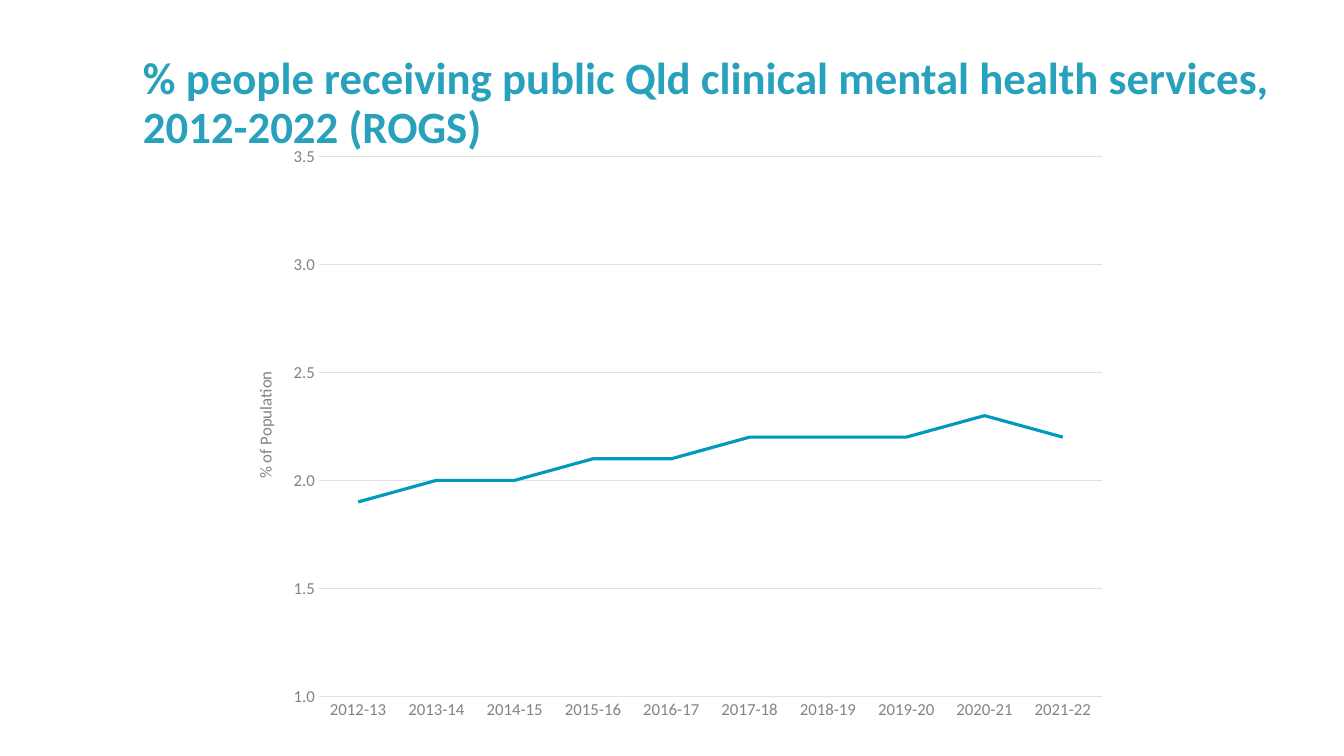
from lxml.etree import SubElement
from pptx import Presentation
from pptx.chart.data import CategoryChartData
from pptx.dml.color import RGBColor
from pptx.enum.chart import XL_CHART_TYPE, XL_TICK_MARK
from pptx.enum.text import MSO_ANCHOR, PP_ALIGN
from pptx.oxml.ns import qn
from pptx.util import Inches, Pt

WIDTH, HEIGHT = 13.33, 7.5
FONT = "Calibri"
TEAL, TITLE_BLUE, TEXT, GREY, RULE = "009ABC", "28A1BD", "414041", "848284", "E3E2E3"
TITLE = "% people receiving public Qld clinical mental health services, 2012-2022 (ROGS)"
AXIS_TITLE = "% of Population"
FIRST_YEAR = 2012
SHARES = [1.9, 2, 2, 2.1, 2.1, 2.2, 2.2, 2.2, 2.3, 2.2]
TITLE_BOX = (1.32, 0.24, 11.87, 1.59)
CHART_BOX = (WIDTH / 6, 1.34, WIDTH * 2 / 3, 5.93)
PLOT_SHARE = {"x": 0.106, "y": 0.036, "w": 0.874, "h": 0.903}
AXIS_TITLE_SHARE = {"x": 0.03, "y": 0.39}


def color(value):
    return RGBColor.from_string(value)


def style_font(font, size, value, bold=False):
    font.name = FONT
    font.size = Pt(size)
    font.bold = bold
    font.color.rgb = color(value)


def style_line(line, value, width):
    line.color.rgb = color(value)
    line.width = Pt(width)


def place(layout, shares, target=None):
    manual = SubElement(layout, qn("c:manualLayout"))
    settings = [("layoutTarget", target)] if target else []
    settings += [(f"{key}Mode", "edge") for key in ("x", "y")]
    settings += shares.items()
    for tag, value in settings:
        SubElement(manual, qn(f"c:{tag}")).set("val", str(value))


def add_title(page):
    box = page.shapes.add_textbox(*map(Inches, TITLE_BOX))
    frame = box.text_frame
    frame.word_wrap = True
    frame.vertical_anchor = MSO_ANCHOR.MIDDLE
    para = frame.paragraphs[0]
    para.alignment = PP_ALIGN.LEFT
    para.line_spacing = 0.9
    span = para.add_run()
    span.text = TITLE
    style_font(span.font, 32, TITLE_BLUE, True)


def style_axis(axis):
    axis.major_tick_mark = axis.minor_tick_mark = XL_TICK_MARK.NONE
    style_font(axis.tick_labels.font, 12, GREY)


def add_share_chart(page):
    data = CategoryChartData()
    data.categories = [
        f"{year}-{(year + 1) % 100}"
        for year in range(FIRST_YEAR, FIRST_YEAR + len(SHARES))
    ]
    data.add_series("Series 1", SHARES)
    chart = page.shapes.add_chart(
        XL_CHART_TYPE.LINE, *map(Inches, CHART_BOX), data
    ).chart
    style_font(chart.font, 10, TEXT)
    chart.has_legend = False
    chart.has_title = False

    plot = chart.plots[0]
    plot.vary_by_categories = False
    series = plot.series[0]
    series.smooth = False
    style_line(series.format.line, TEAL, 2.25)

    years, shares = chart.category_axis, chart.value_axis
    for axis in (years, shares):
        style_axis(axis)
    style_line(years.format.line, RULE, 0.75)
    shares.format.line.fill.background()
    shares.minimum_scale, shares.maximum_scale, shares.major_unit = 1, 3.5, 0.5
    style_line(shares.major_gridlines.format.line, RULE, 0.75)
    shares.tick_labels.number_format = "0.0"
    shares.tick_labels.number_format_is_linked = False

    title = shares.axis_title
    span = title.text_frame.paragraphs[0].add_run()
    span.text = AXIS_TITLE
    style_font(span.font, 12, GREY)
    body = title.text_frame._txBody.find(qn("a:bodyPr"))
    body.set("rot", "-5400000")
    body.set("vert", "horz")

    title_layout = shares._element.find(qn("c:title")).find(qn("c:layout"))
    place(title_layout, AXIS_TITLE_SHARE)
    area = chart._chartSpace.chart.plotArea
    layout = area.find(qn("c:layout"))
    if layout is None:
        layout = area.makeelement(qn("c:layout"))
        area.insert(0, layout)
    place(layout, PLOT_SHARE, "inner")


def main():
    deck = Presentation()
    deck.slide_width, deck.slide_height = Inches(WIDTH), Inches(HEIGHT)
    page = deck.slides.add_slide(deck.slide_layouts[6])
    add_title(page)
    add_share_chart(page)
    deck.save("out.pptx")


if __name__ == "__main__":
    main()
